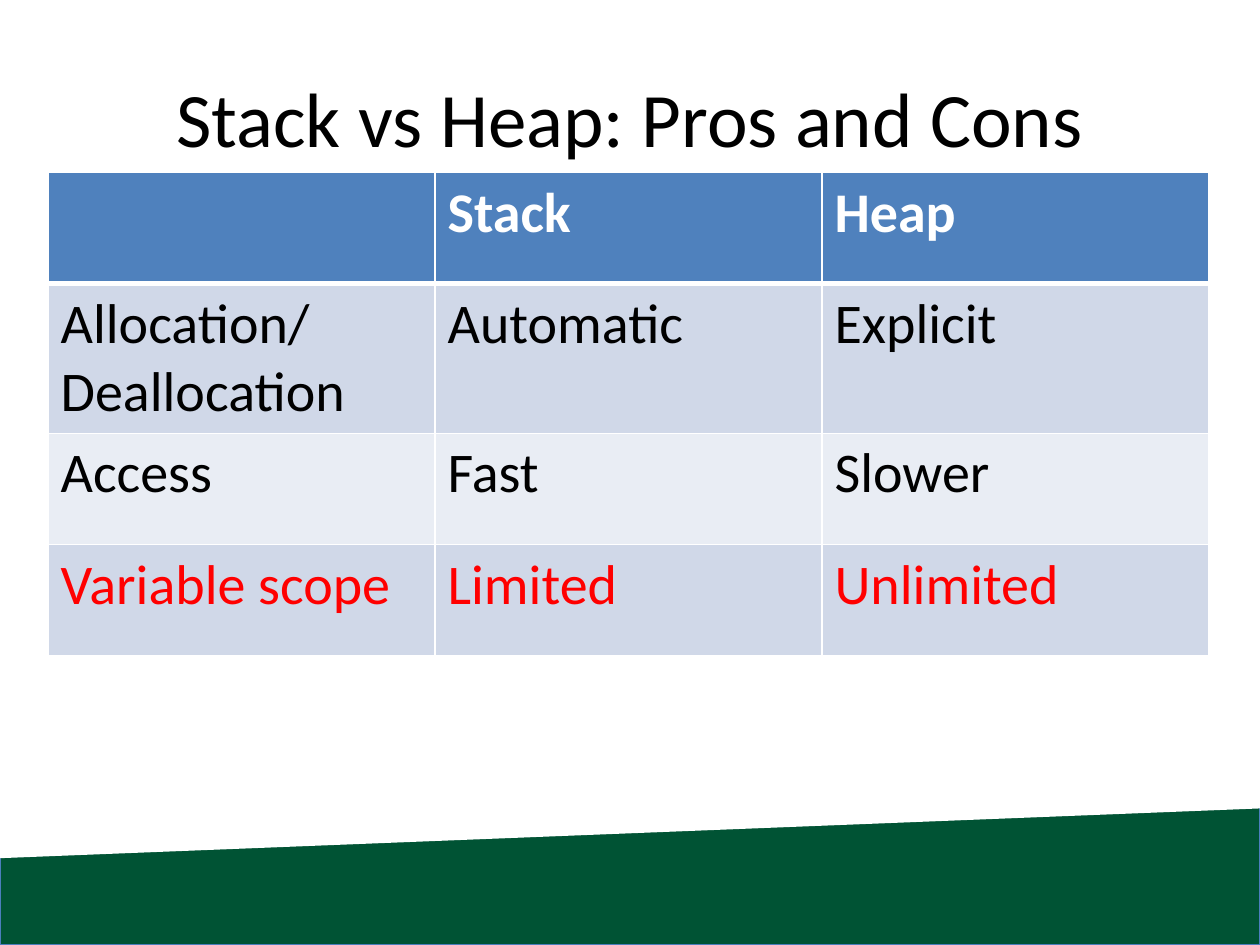
from dataclasses import dataclass

import pptx
import pptx.dml.color
import pptx.enum.shapes
import pptx.enum.text
import pptx.oxml
import pptx.oxml.ns
import pptx.util
from pptx.dml.color import RGBColor
from pptx.util import Cm

FONT = "Calibri"
BLACK = RGBColor(0x00, 0x00, 0x00)
WHITE = RGBColor(0xFF, 0xFF, 0xFF)
RED = RGBColor(0xFF, 0x00, 0x00)
GREEN = RGBColor(0x00, 0x53, 0x34)
EDGE_BLUE = RGBColor(0x4B, 0x7E, 0xBC)
HEADER_BLUE = RGBColor(0x4F, 0x81, 0xBD)
BAND_DARK = RGBColor(0xD0, 0xD8, 0xE8)
BAND_LIGHT = RGBColor(0xE9, 0xED, 0xF4)

COLUMN_WIDTH = Cm(7.8)
ROW_HEIGHT = Cm(2.24)


@dataclass(frozen=True)
class ComparisonRow:
    labels: tuple[str, str, str]
    fill: RGBColor
    color: RGBColor = BLACK
    bold: bool = False
    top_border: float = 1
    bottom_border: float = 1


COMPARISON = [
    ComparisonRow(("", "Stack", "Heap"), HEADER_BLUE, WHITE, bold=True, bottom_border=3),
    ComparisonRow(("Allocation/Deallocation", "Automatic", "Explicit"), BAND_DARK, top_border=3),
    ComparisonRow(("Access", "Fast", "Slower"), BAND_LIGHT),
    ComparisonRow(("Variable scope", "Limited", "Unlimited"), BAND_DARK, RED),
]


def write_text(frame, text: str, *, size: float, color: RGBColor,
               bold: bool = False, align=None) -> None:
    paragraph = frame.paragraphs[0]
    paragraph.alignment = align
    if not text:
        return
    run = paragraph.add_run()
    run.text = text
    run.font.name = FONT
    run.font.size = pptx.util.Pt(size)
    run.font.bold = bold
    run.font.color.rgb = color


def draw_shape(slide, kind, left, top, width, height, fill: RGBColor):
    shape = slide.shapes.add_shape(kind, left, top, width, height)
    shape.shadow.inherit = False
    shape.fill.solid()
    shape.fill.fore_color.rgb = fill
    shape.line.fill.background()
    return shape


def draw_footer(slide) -> None:
    kinds = pptx.enum.shapes.MSO_SHAPE
    band = draw_shape(slide, kinds.RECTANGLE, Cm(0), Cm(14.25), Cm(25.4), Cm(4.8), GREEN)
    band.line.color.rgb = EDGE_BLUE
    band.line.width = pptx.util.Pt(0.75)
    slant = draw_shape(slide, kinds.PARALLELOGRAM, Cm(9.75), Cm(1.65), Cm(5.9), Cm(25.4), WHITE)
    slant.adjustments[0] = 0.17
    slant.rotation = 90
    slant._element.spPr.xfrm.set("flipH", "1")


def set_borders(cell, top: float, bottom: float) -> None:
    properties = cell._tc.get_or_add_tcPr()
    for side, width in (("L", 1), ("R", 1), ("T", top), ("B", bottom)):
        properties.append(pptx.oxml.parse_xml(
            f'<a:ln{side} {pptx.oxml.ns.nsdecls("a")} w="{pptx.util.Pt(width)}">'
            f'<a:solidFill><a:srgbClr val="{WHITE}"/></a:solidFill></a:ln{side}>'))


def draw_comparison(slide, rows: list[ComparisonRow]) -> None:
    column_count = len(rows[0].labels)
    table = slide.shapes.add_table(
        len(rows), column_count, Cm(0.97), Cm(3.48),
        COLUMN_WIDTH * column_count, ROW_HEIGHT * len(rows)).table
    for column in table.columns:
        column.width = COLUMN_WIDTH
    for table_row, row in zip(table.rows, rows):
        table_row.height = ROW_HEIGHT
        for cell, label in zip(table_row.cells, row.labels):
            set_borders(cell, row.top_border, row.bottom_border)
            cell.fill.solid()
            cell.fill.fore_color.rgb = row.fill
            write_text(cell.text_frame, label, size=32, color=row.color, bold=row.bold)


def main() -> None:
    deck = pptx.Presentation()
    deck.slide_width, deck.slide_height = Cm(25.4), Cm(19.05)
    slide = deck.slides.add_slide(deck.slide_layouts.get_by_name("Title Only"))
    draw_footer(slide)

    title = slide.shapes.title
    title.left, title.top, title.width, title.height = Cm(1.27), Cm(0.76), Cm(22.86), Cm(3.18)
    title.text_frame.vertical_anchor = pptx.enum.text.MSO_ANCHOR.MIDDLE
    write_text(title.text_frame, "Stack vs Heap: Pros and Cons", size=44, color=BLACK,
               align=pptx.enum.text.PP_ALIGN.CENTER)

    draw_comparison(slide, COMPARISON)
    deck.save("out.pptx")


if __name__ == "__main__":
    main()
